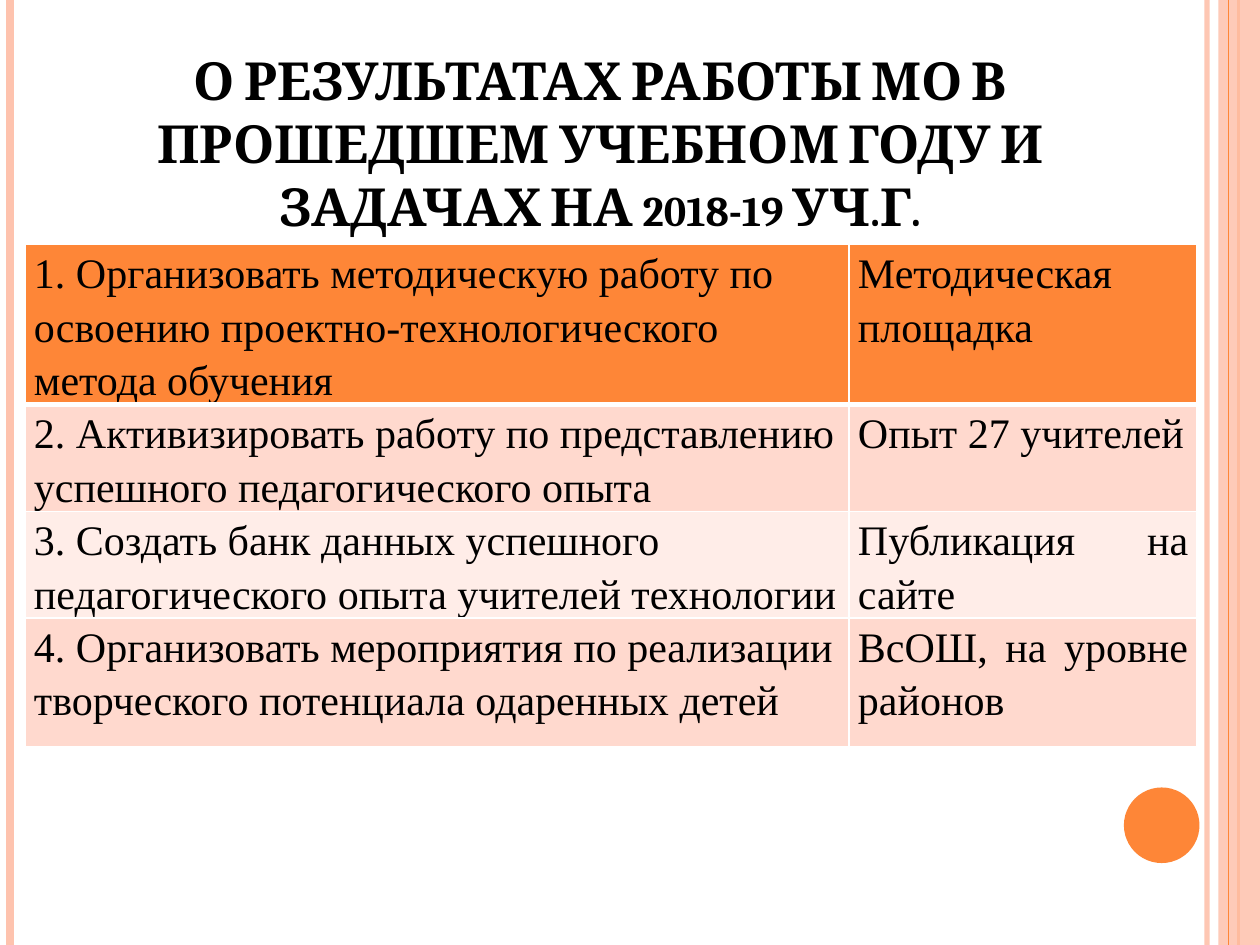
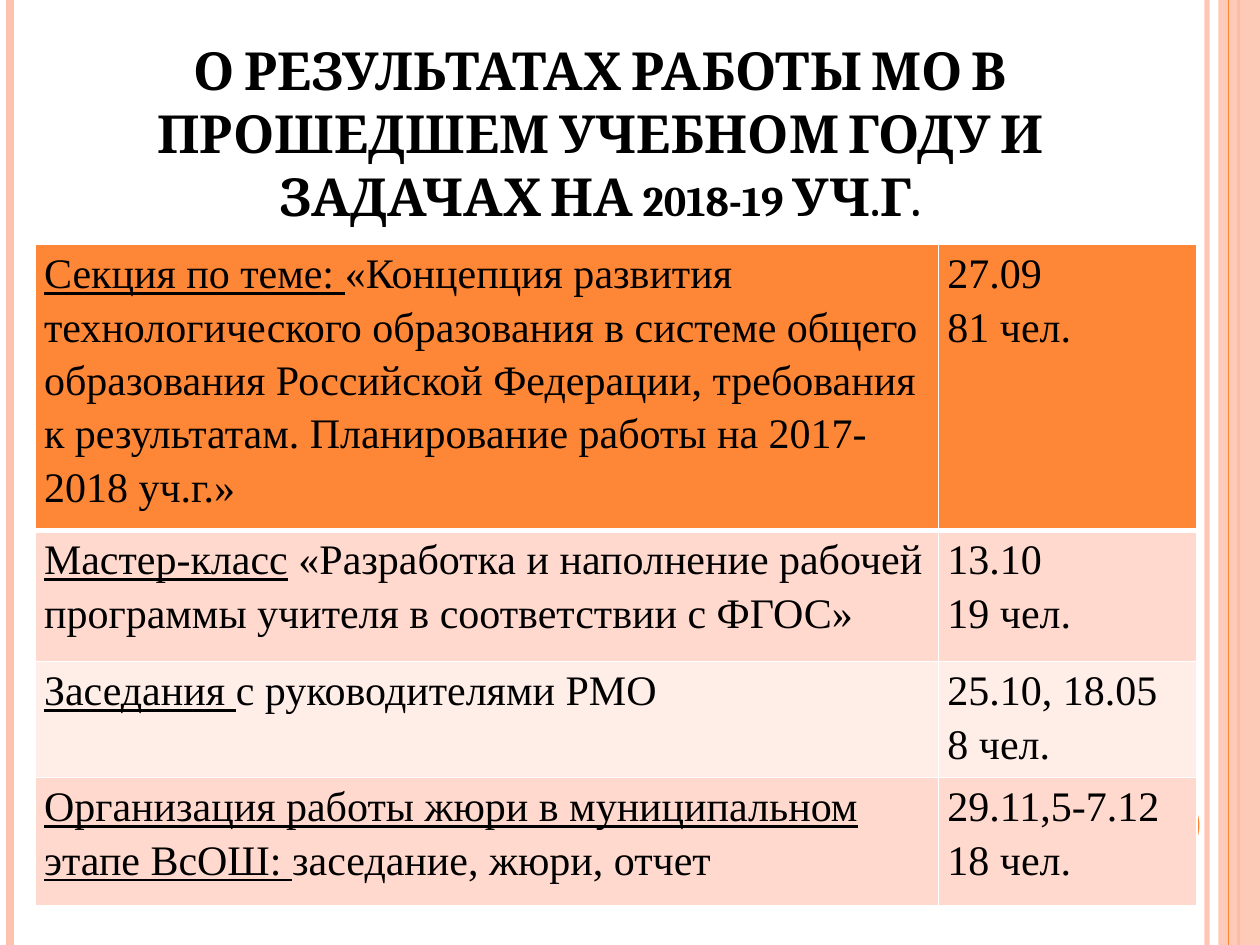
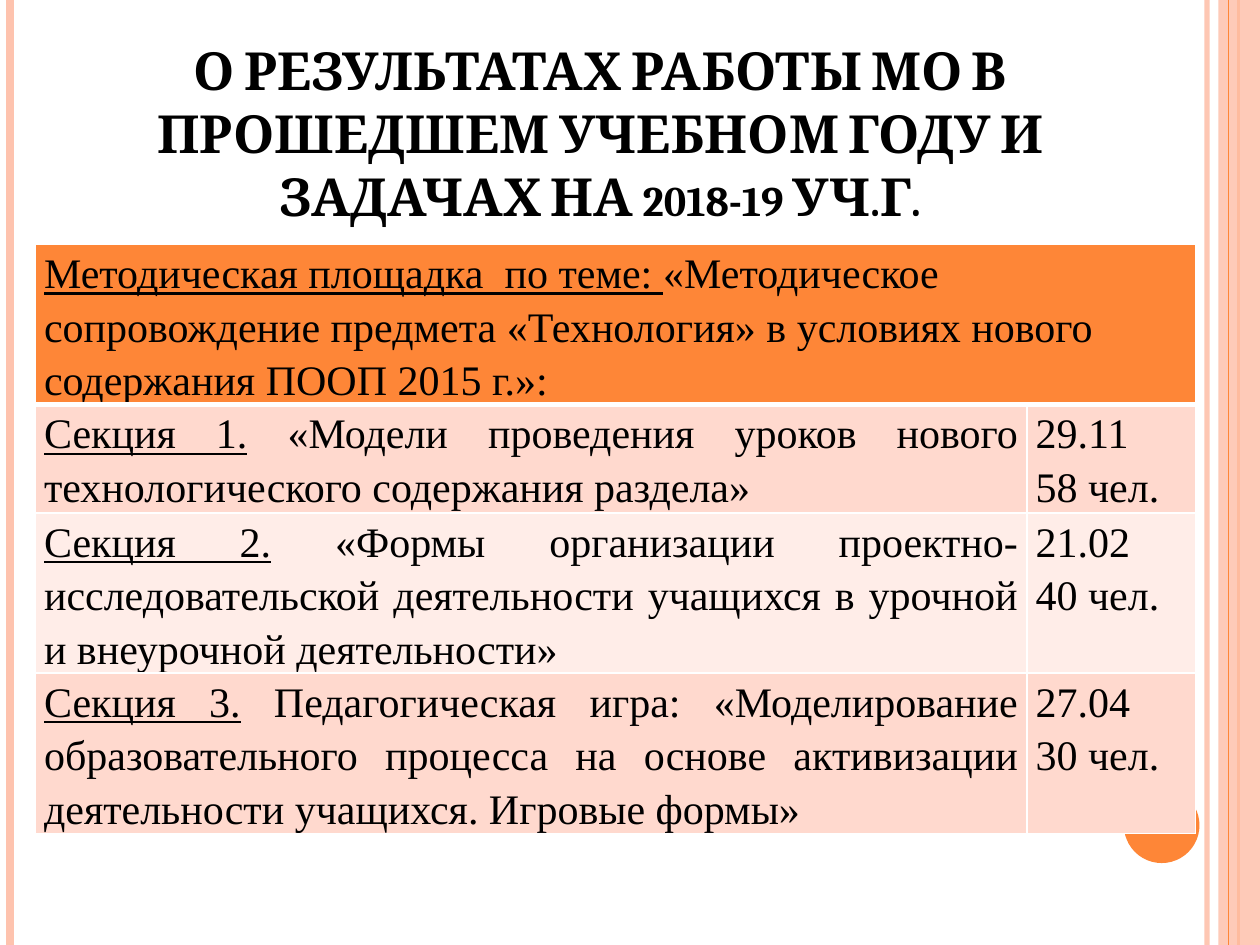
from lxml import etree
from pptx import Presentation
from pptx.dml.color import RGBColor
from pptx.enum.shapes import MSO_CONNECTOR, MSO_SHAPE
from pptx.enum.text import MSO_ANCHOR, MSO_AUTO_SIZE, PP_ALIGN
from pptx.oxml.ns import qn
from pptx.util import Inches, Pt

LINE = MSO_CONNECTOR.STRAIGHT
RECT, OVAL = MSO_SHAPE.RECTANGLE, MSO_SHAPE.OVAL
LEFT, MID, JUST = PP_ALIGN.LEFT, PP_ALIGN.CENTER, PP_ALIGN.JUSTIFY

BLACK = RGBColor(0x00, 0x00, 0x00)
WHITE = RGBColor(0xFF, 0xFF, 0xFF)
ORANGE = RGBColor(0xFE, 0x86, 0x37)
PEACH = RGBColor(0xFE, 0xC3, 0xAE)
ROSE = RGBColor(0xFF, 0xD9, 0xCE)
BLUSH = RGBColor(0xFF, 0xED, 0xE8)

WIDE, HIGH = 10, 7.5
TOP = 1.94
TITLE = "О РЕЗУЛЬТАТАХ РАБОТЫ МО В ПРОШЕДШЕМ УЧЕБНОМ ГОДУ И ЗАДАЧАХ НА 2018-19 УЧ.Г."

# Each row: underlined lead, rest of the left cell, right cell (None: merged)
GOALS = [
    ("", "1. Организовать методическую работу по освоению "
     "проектно-технологического метода обучения", "Методическая площадка"),
    ("", "2. Активизировать работу по представлению успешного "
     "педагогического опыта", "Опыт 27 учителей"),
    ("", "3. Создать банк данных успешного педагогического опыта "
     "учителей технологии", "Публикация на сайте"),
    ("", "4. Организовать мероприятия по реализации творческого "
     "потенциала одаренных детей", "ВсОШ, на уровне районов"),
]
EVENTS = [
    ("Секция по теме: ", "«Концепция развития технологического образования "
     "в системе общего образования Российской Федерации, требования к "
     "результатам. Планирование работы на 2017-2018 уч.г.»", "27.09\n81 чел."),
    ("Мастер-класс", " «Разработка и наполнение рабочей программы учителя "
     "в соответствии с ФГОС»", "13.10\n19 чел."),
    ("Заседания ", "с руководителями РМО", "25.10, 18.05\n8 чел."),
    ("Организация работы жюри в муниципальном этапе ВсОШ: ",
     "заседание, жюри, отчет", "29.11,5-7.12\n18 чел."),
]
PARTS = [
    ("Методическая площадка  по теме: ", "«Методическое сопровождение "
     "предмета «Технология» в условиях нового содержания ПООП 2015 г.»:", None),
    ("Секция 1.", " «Модели проведения уроков нового технологического "
     "содержания раздела»", "29.11\n58 чел."),
    ("Секция 2.", " «Формы организации проектно-исследовательской "
     "деятельности учащихся в урочной и внеурочной деятельности»",
     "21.02\n40 чел."),
    ("Секция 3.", " Педагогическая игра: «Моделирование образовательного "
     "процесса на основе активизации деятельности учащихся. Игровые формы»",
     "27.04\n30 чел."),
]


def fade(item, share):
    """Make the first solid colour of an item partly clear."""
    color = next(item._element.spPr.iter(qn("a:srgbClr")))
    etree.SubElement(color, qn("a:alpha")).set("val", str(share * 1000))


def add_rule(slide, x, color, width):
    rule = slide.shapes.add_connector(
        LINE, Inches(x), 0, Inches(x), Inches(HIGH))
    rule.line.color.rgb = color
    rule.line.width = Pt(width)
    etree.SubElement(rule._element.spPr, qn("a:effectLst"))
    return rule


def add_block(slide, kind, x, y, w, h, color):
    block = slide.shapes.add_shape(
        kind, Inches(x), Inches(y), Inches(w), Inches(h))
    block.shadow.inherit = False
    block.fill.solid()
    block.fill.fore_color.rgb = color
    block.line.fill.background()
    return block


def add_frame(slide):
    """Draw the side bands and the disc that every slide carries."""
    fade(add_rule(slide, 9.58, PEACH, 3), 93)
    add_rule(slide, 0.08, PEACH, 4.5)
    add_rule(slide, 9.83, ORANGE, 1.5)
    fade(add_block(slide, RECT, 9.67, 0, WIDE - 9.67, HIGH, PEACH), 87)
    add_rule(slide, 9.75, ORANGE, 0.75)
    add_block(slide, OVAL, 8.92, 6.25, 0.6, 0.6, ORANGE)


def set_title(slide, y):
    title = slide.shapes.title
    title.left, title.top = Inches(0.43), Inches(y)
    title.width, title.height = Inches(8.67), Inches(1.72)
    frame = title.text_frame
    frame.text = TITLE
    frame.auto_size = MSO_AUTO_SIZE.NONE
    frame.vertical_anchor = MSO_ANCHOR.BOTTOM
    para = frame.paragraphs[0]
    para.alignment = MID
    font = para.runs[0].font
    font.name, font.size, font.bold = "Cambria", Pt(30), True
    font.color.rgb = BLACK
    font._element.set("cap", "small")


def set_edges(cell, above, below):
    props = cell._tc.get_or_add_tcPr()
    sides = (("L", 1), ("R", 1), ("T", above), ("B", below))
    for spot, (side, width) in enumerate(sides):
        edge = etree.Element(qn(f"a:ln{side}"), w=str(Pt(width)))
        fill = etree.SubElement(edge, qn("a:solidFill"))
        etree.SubElement(fill, qn("a:srgbClr"), val=str(WHITE))
        props.insert(spot, edge)


def style_cell(cell, row, align):
    cell.margin_left = cell.margin_right = Inches(0.07)
    cell.margin_top = cell.margin_bottom = 0
    cell.fill.solid()
    cell.fill.fore_color.rgb = (ORANGE, ROSE, BLUSH, ROSE)[row]
    set_edges(cell, 3 if row == 1 else 1, 3 if row == 0 else 1)
    for para in cell.text_frame.paragraphs:
        para.alignment = align
        para.line_spacing = 1.15
        for run in para.runs:
            font = run.font
            font.name, font.size, font.bold = "Times New Roman", Pt(24), False
            font.color.rgb = BLACK


def add_grid(slide, x, cols, highs, rows, align):
    """Place a two-column table; align applies to the left cells below the head."""
    grid = slide.shapes.add_table(
        len(rows), 2, Inches(x), Inches(TOP),
        Inches(sum(cols)), Inches(sum(highs))).table
    grid.first_row = grid.horz_banding = False
    for col, width in zip(grid.columns, cols):
        col.width = Inches(width)
    for i, (lead, rest, note) in enumerate(rows):
        grid.rows[i].height = Inches(highs[i])
        left, right = grid.cell(i, 0), grid.cell(i, 1)
        para = left.text_frame.paragraphs[0]
        para.text = lead or rest
        if lead:
            para.runs[0].font.underline = True
            para.add_run().text = rest
        if note is None:
            left.merge(right)
        else:
            right.text_frame.text = note
        style_cell(left, i, align if i else LEFT)
        style_cell(right, i, JUST)


def main():
    deck = Presentation()
    deck.slide_width, deck.slide_height = Inches(WIDE), Inches(HIGH)
    pages = [
        (0.21, 0.2, (6.54, 2.76), (0.76, 0.68, 0.68, 1.02), GOALS, LEFT),
        (0.13, 0.28, (7.17, 2.05), (2.27, 1.04, 0.92, 1.02), EVENTS, LEFT),
        (0.13, 0.28, (7.87, 1.34), (1.1, 0.86, 0.92, 1.02), PARTS, JUST),
    ]
    for y, *grid in pages:
        slide = deck.slides.add_slide(deck.slide_layouts[5])
        add_frame(slide)
        set_title(slide, y)
        add_grid(slide, *grid)
    deck.save("out.pptx")


if __name__ == "__main__":
    main()
